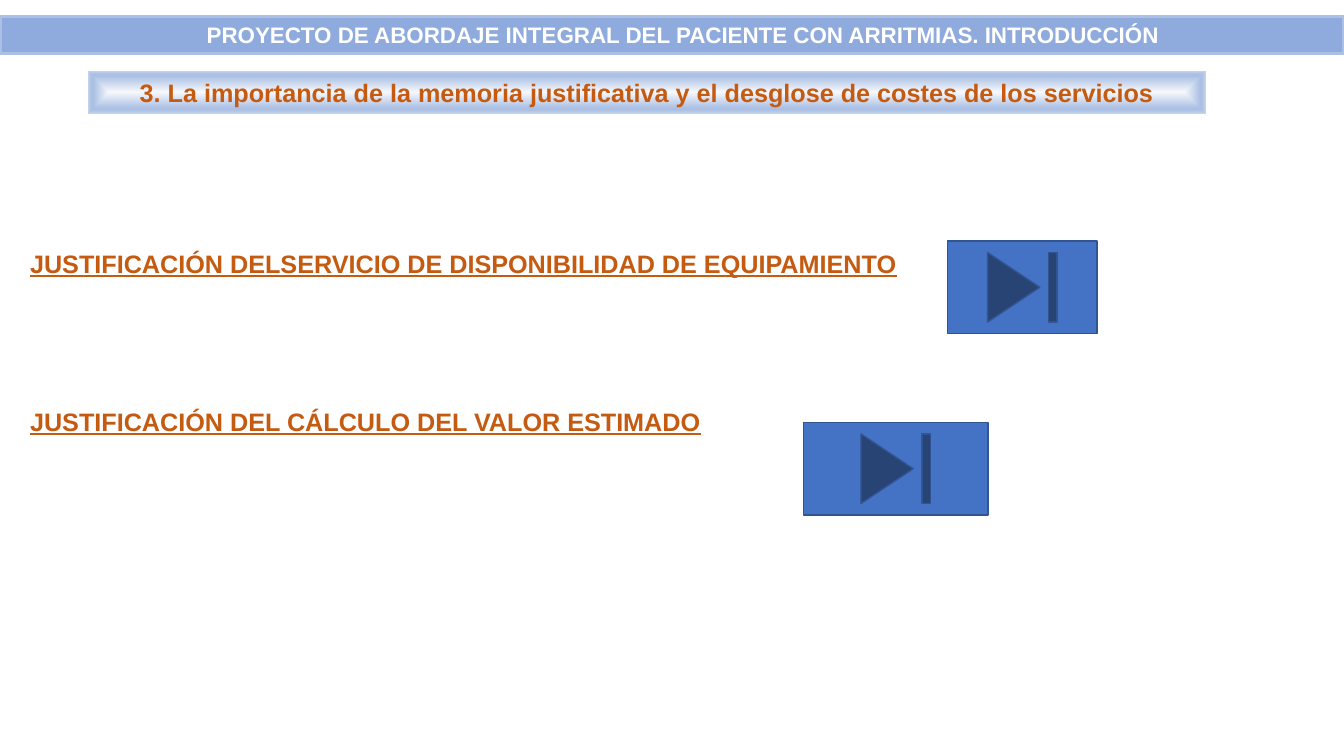
from pptx import Presentation
from pptx.dml.color import RGBColor
from pptx.enum.shapes import MSO_SHAPE
from pptx.enum.text import MSO_ANCHOR, PP_ALIGN
from pptx.oxml import parse_xml
from pptx.oxml.ns import nsdecls
from pptx.util import Inches, Pt

RECTANGLE, END_BUTTON = MSO_SHAPE.RECTANGLE, MSO_SHAPE.ACTION_BUTTON_END
TOP, MIDDLE = MSO_ANCHOR.TOP, MSO_ANCHOR.MIDDLE
CENTER, JUSTIFY = PP_ALIGN.CENTER, PP_ALIGN.JUSTIFY

WHITE = RGBColor(0xFF, 0xFF, 0xFF)
ORANGE = RGBColor(0xC5, 0x5A, 0x11)
BANNER_BLUE = RGBColor(0x8F, 0xAA, 0xDC)
PALE_BLUE = RGBColor(0xAB, 0xC0, 0xE4)
GLOW_CENTER = RGBColor(0xF6, 0xF8, 0xFC)
GLOW_EDGE = RGBColor(0xC7, 0xD5, 0xED)
BUTTON_BLUE = RGBColor(0x44, 0x72, 0xC4)
BUTTON_LINE = RGBColor(0x32, 0x54, 0x91)

GLOW_STOPS = [(0, GLOW_CENTER), (74, PALE_BLUE), (83, PALE_BLUE), (100, GLOW_EDGE)]
HEADINGS = [
    "JUSTIFICACIÓN DELSERVICIO DE DISPONIBILIDAD DE EQUIPAMIENTO",
    "JUSTIFICACIÓN DEL CÁLCULO DEL VALOR ESTIMADO",
]
BUTTON_BOXES = [(9.4, 2.39, 1.48, 0.92), (7.97, 4.19, 1.83, 0.92)]


def set_attributes(target, values):
    for name, value in values.items():
        setattr(target, name, value)


def write(para, text, size, color, underline=False):
    span = para.add_run()
    span.text = text
    set_attributes(span.font, {"name": "Arial", "size": Pt(size), "bold": True,
                               "underline": underline})
    span.font.color.rgb = color


def add_plain_shape(page, kind, box, fill, line=None, line_width=1):
    shape = page.shapes.add_shape(kind, *map(Inches, box))
    shape.shadow.inherit = False
    shape.fill.solid()
    shape.fill.fore_color.rgb = fill
    if line is None:
        shape.line.fill.background()
    else:
        shape.line.color.rgb = line
        shape.line.width = Pt(line_width)
    return shape


def apply_glow(shape):
    """Replace the solid fill with a gradient that runs from centre to edges."""
    stops = "".join(
        f'<a:gs pos="{position * 1000}"><a:srgbClr val="{color}"/></a:gs>'
        for position, color in GLOW_STOPS)
    gradient = parse_xml(
        f'<a:gradFill {nsdecls("a")} rotWithShape="1"><a:gsLst>{stops}</a:gsLst>'
        '<a:path path="shape"><a:fillToRect l="50000" t="50000" r="50000" b="50000"/>'
        '</a:path></a:gradFill>')
    properties = shape.fill._xPr
    properties.replace(properties.solidFill, gradient)


def add_banner(page, box):
    banner = add_plain_shape(page, RECTANGLE, box, BANNER_BLUE, PALE_BLUE, 2.25)
    frame = banner.text_frame
    set_attributes(frame, {"word_wrap": True, "vertical_anchor": MIDDLE,
                           "margin_left": Inches(0.32)})
    para = frame.paragraphs[0]
    para.alignment = CENTER
    write(para, "PROYECTO DE ABORDAJE INTEGRAL DEL PACIENTE CON ARRITMIAS. INTRODUCCIÓN",
          16, WHITE)


def add_section_title(page, box):
    title = add_plain_shape(page, RECTANGLE, box, PALE_BLUE)
    apply_glow(title)
    set_attributes(title.text_frame, {"word_wrap": True, "vertical_anchor": TOP})
    para = title.text_frame.paragraphs[0]
    set_attributes(para, {"alignment": CENTER, "line_spacing": 1.07})
    write(para, "3. La importancia de la memoria justificativa y el desglose de costes "
          "de los servicios", 18, ORANGE)


def add_headings(page, box):
    frame = page.shapes.add_textbox(*map(Inches, box)).text_frame
    set_attributes(frame, {"word_wrap": True, "margin_top": Inches(1.2)})
    for index, heading in enumerate(HEADINGS):
        para = frame.add_paragraph() if index else frame.paragraphs[0]
        set_attributes(para, {"alignment": JUSTIFY,
                              "space_before": Pt(91.4 if index else 0)})
        write(para, heading, 18, ORANGE, underline=True)


def main():
    deck = Presentation()
    set_attributes(deck, {"slide_width": Inches(13.33), "slide_height": Inches(7.5)})
    page = deck.slides.add_slide(deck.slide_layouts[6])
    add_headings(page, (0.2, 1.26, 12.9, 3.85))
    add_section_title(page, (0.87, 0.7, 11.09, 0.43))
    add_banner(page, (0, 0.16, 13.33, 0.37))
    for box in BUTTON_BOXES:
        add_plain_shape(page, END_BUTTON, box, BUTTON_BLUE, BUTTON_LINE)
    deck.save("out.pptx")


if __name__ == "__main__":
    main()
